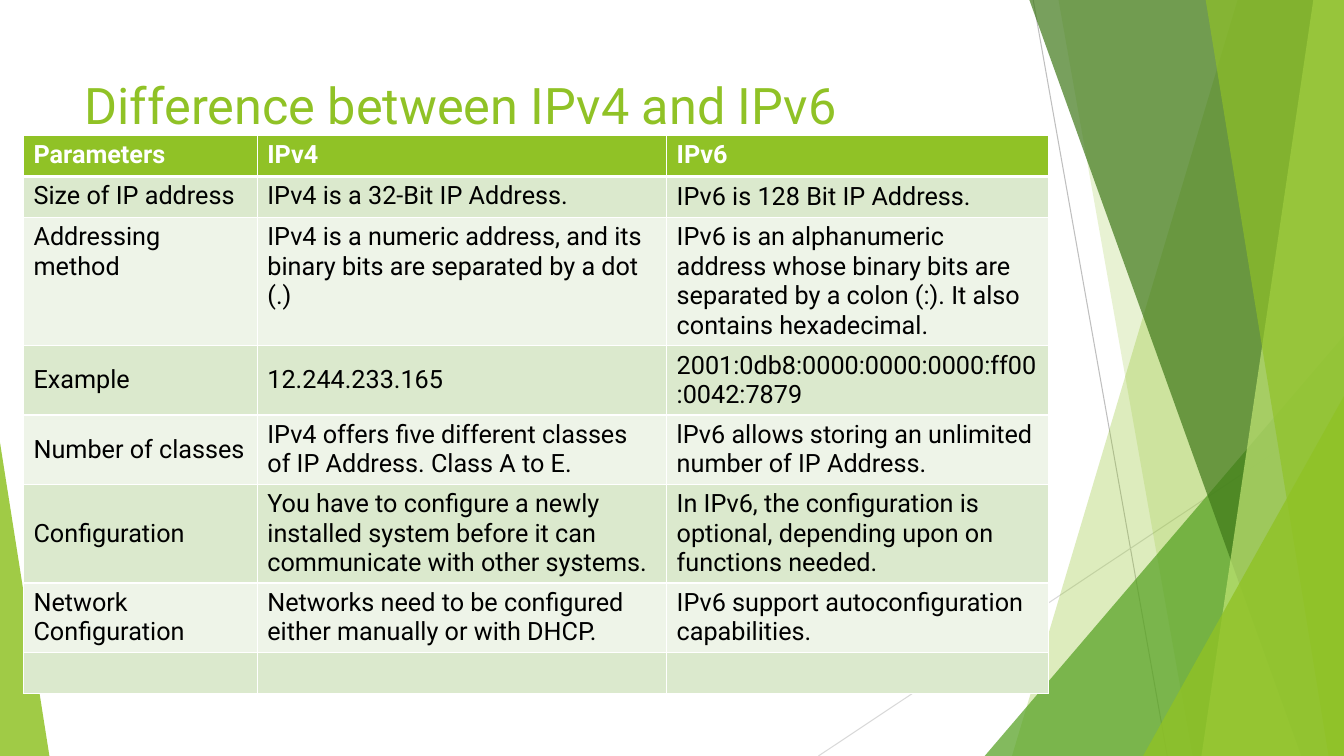
from lxml import etree
from pptx import Presentation
from pptx.dml.color import RGBColor
from pptx.enum import shapes, text
from pptx.oxml import ns
from pptx.util import Pt

TITLE = "Difference between IPv4 and IPv6"
ROWS = [
    ("Parameters", "IPv4", "IPv6"),
    ("Size of IP address", "IPv4 is a 32-Bit IP Address.", "IPv6 is 128 Bit IP Address."),
    ("Addressing method",
     "IPv4 is a numeric address, and its binary bits are separated by a dot (.)",
     "IPv6 is an alphanumeric address whose binary bits are separated by a colon (:). It also contains hexadecimal."),
    ("Example", "12.244.233.165", "2001:0db8:0000:0000:0000:ff00:0042:7879"),
    ("Number of classes",
     "IPv4 offers five different classes of IP Address. Class A to E.",
     "lPv6 allows storing an unlimited number of IP Address."),
    ("Configuration",
     "You have to configure a newly installed system before it can communicate with other systems.",
     "In IPv6, the configuration is optional, depending upon on functions needed."),
    ("Network Configuration",
     "Networks need to be configured either manually or with DHCP.",
     "IPv6 support autoconfiguration capabilities."),
    ("", "", ""),
]
COLS = (167, 292.4, 272.6)
ROW_H = 29.2
COLORS = {"lime": "90C226", "leaf": "54A021", "moss": "3F7819", "pale": "C0E474",
          "mint": "DBE9CD", "mist": "EEF4E8", "white": "FFFFFF", "black": "000000",
          "gray": "BFBFBF", "silver": "D9D9D9"}
WIDE, HIGH, TOP = 960, 540, -0.6
LINES = [((738, 0), (833.8, HIGH), "gray"), ((WIDE, 290.2), (584.6, HIGH), "silver")]
DECOR = [
    ("band", (884.2, 722.9), "lime", 30),
    ("band", (756, 851.8), "lime", 20),
    ("peak", (703.4, 239.8, 256.6, 1), "leaf", 72),
    ("band", (735.1, 929.5), "moss", 70),
    ("band", (938.2, 858.2), "pale", 70),
    ("band", (861.1, 949), "lime", 65),
    ("peak", (816.5, 283, 143.5, 1), "lime", 80),
    ("peak", (0, 316.1, 35.3, 0), "lime", 85),
]


def tint(name):
    return RGBColor.from_string(COLORS[name])


def style(obj, form):
    for key, val in form.items():
        setattr(obj, key, val)


def write(frame, words, color, size, bold=False):
    frame.text = words
    font = frame.paragraphs[0].font
    style(font, {"name": "Roboto", "size": Pt(size), "bold": bold})
    font.color.rgb = tint(color)


def paint(shape, color, alpha):
    shape.shadow.inherit = False
    shape.line.fill.background()
    shape.fill.solid()
    shape.fill.fore_color.rgb = tint(color)
    node = shape.fill._xPr.find(".//" + ns.qn("a:srgbClr"))
    etree.SubElement(node, ns.qn("a:alpha"), val=str(alpha * 1000))


def band(tree, head, foot):
    form = tree.build_freeform(Pt(head), Pt(TOP))
    form.add_line_segments([(Pt(x), Pt(y)) for x, y in
                            ((WIDE, TOP), (WIDE, HIGH), (foot, HIGH))])
    return form.convert_to_shape()


def peak(tree, left, top, width, tip):
    shape = tree.add_shape(shapes.MSO_SHAPE.ISOSCELES_TRIANGLE,
                           Pt(left), Pt(top), Pt(width), Pt(HIGH - top))
    shape.adjustments[0] = tip
    return shape


def border(cell, low):
    prop = cell._tc.get_or_add_tcPr()
    for spot, side in enumerate("LRTB"):
        wide = low if side == "B" else 1
        line = etree.Element(ns.qn("a:ln" + side), w=str(Pt(wide)))
        fill = etree.SubElement(line, ns.qn("a:solidFill"))
        etree.SubElement(fill, ns.qn("a:srgbClr"), val=COLORS["white"])
        prop.insert(spot, line)


def draw_decor(tree):
    for start, end, color in LINES:
        line = tree.add_connector(shapes.MSO_CONNECTOR.STRAIGHT,
                                  *(Pt(v) for v in start + end))
        line.line.width = Pt(0.75)
        line.line.color.rgb = tint(color)
        etree.SubElement(line._element.spPr, ns.qn("a:effectLst"))
    make = {"band": band, "peak": peak}
    for kind, spots, color, alpha in DECOR:
        paint(make[kind](tree, *spots), color, alpha)


def draw_title(title):
    style(title, {"left": Pt(53.3), "top": Pt(48.2), "width": Pt(676.8), "height": Pt(52.6)})
    write(title.text_frame, TITLE, "lime", 36)
    style(title.text_frame, {"word_wrap": True, "auto_size": text.MSO_AUTO_SIZE.NONE,
                             "vertical_anchor": text.MSO_ANCHOR.MIDDLE})
    title.text_frame.paragraphs[0].alignment = text.PP_ALIGN.LEFT


def draw_table(tree):
    frame = tree.add_table(len(ROWS), len(COLS), Pt(16.8), Pt(96.8),
                           Pt(sum(COLS)), Pt(ROW_H * len(ROWS)))
    grid = frame.table
    for col, wide in zip(grid.columns, COLS):
        col.width = Pt(wide)
    for r, row in enumerate(ROWS):
        grid.rows[r].height = Pt(ROW_H)
        back = "lime" if r == 0 else "mint" if r % 2 else "mist"
        for c, words in enumerate(row):
            cell = grid.cell(r, c)
            write(cell.text_frame, words, "black" if r else "white", 18, r == 0)
            cell.fill.solid()
            cell.fill.fore_color.rgb = tint(back)
            border(cell, 1 if r else 3)
            if r > 2 or (r, c) == (1, 2):
                cell.vertical_anchor = text.MSO_ANCHOR.MIDDLE
    frame.height = Pt(404.6)


def main():
    deck = Presentation()
    style(deck, {"slide_width": Pt(WIDE), "slide_height": Pt(HIGH)})
    slide = deck.slides.add_slide(deck.slide_layouts[5])
    draw_decor(slide.shapes)
    draw_title(slide.shapes.title)
    draw_table(slide.shapes)
    deck.save("out.pptx")


if __name__ == "__main__":
    main()
